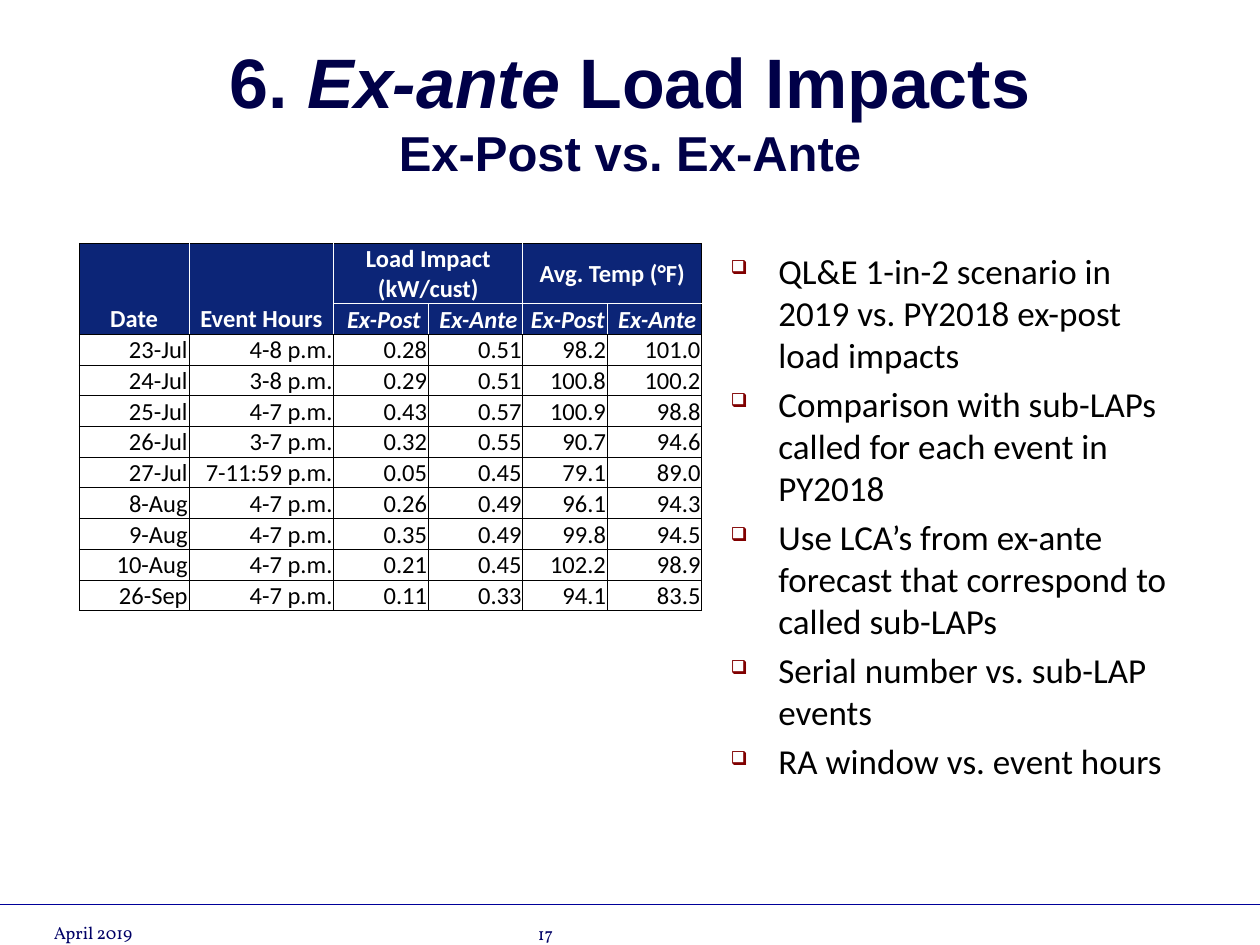
from dataclasses import dataclass, field

from lxml.etree import SubElement
from pptx import Presentation
from pptx.dml.color import RGBColor
from pptx.enum.shapes import MSO_CONNECTOR
from pptx.enum.text import MSO_ANCHOR, PP_ALIGN
from pptx.oxml.ns import qn
from pptx.util import Inches, Pt

COLUMNS, ROWS = 100, 75
SLIDE_WIDTH, SLIDE_HEIGHT = Inches(10), Inches(7.5)
WHITE, BLACK, NAVY = "FFFFFF", "000000", "0C2577"
MAROON, FOOTER_BLUE, RULE_BLUE = "800000", "000066", "000099"

TITLE_FORMAT = {"name": "Arial", "size": Pt(40), "bold": True, "color": "000048"}
BODY_FORMAT = {"name": "Calibri", "size": Pt(20), "color": BLACK}
FOOTER_FORMAT = {"name": "Vollkorn", "size": Pt(10), "color": FOOTER_BLUE}
CELL_FORMAT = {"name": "Calibri", "size": Pt(14), "color": BLACK}
HEADER_FORMAT = CELL_FORMAT | {"bold": True, "color": WHITE}
CELL_MARGINS = {"margin_left": Inches(0.01), "margin_right": Inches(0.01),
                "margin_top": Inches(0.01), "margin_bottom": 0}

TABLE_COLUMNS = (8.7, 11.5, 7.5, 7.5, 6.7, 7.5)
TABLE_ROWS = (4.8,) + (2.4,) * 10
HEADER_ROWS, FIRST_GROUPED_COLUMN = 2, 2
HEADER_SPANS = (((0, 0), (1, 0)), ((0, 1), (1, 1)), ((0, 2), (0, 3)), ((0, 4), (0, 5)))
TABLE_VALUES = (
    ("Date", "Event Hours", "Load Impact (kW/cust)", "", "Avg. Temp (°F)", ""),
    ("", "", " Ex-Post", " Ex-Ante", " Ex-Post", " Ex-Ante"),
    ("23-Jul", "4-8 p.m.", "0.28", "0.51", "98.2", "101.0"),
    ("24-Jul", "3-8 p.m.", "0.29", "0.51", "100.8", "100.2"),
    ("25-Jul", "4-7 p.m.", "0.43", "0.57", "100.9", "98.8"),
    ("26-Jul", "3-7 p.m.", "0.32", "0.55", "90.7", "94.6"),
    ("27-Jul", "7-11:59 p.m.", "0.05", "0.45", "79.1", "89.0"),
    ("8-Aug", "4-7 p.m.", "0.26", "0.49", "96.1", "94.3"),
    ("9-Aug", "4-7 p.m.", "0.35", "0.49", "99.8", "94.5"),
    ("10-Aug", "4-7 p.m.", "0.21", "0.45", "102.2", "98.9"),
    ("26-Sep", "4-7 p.m.", "0.11", "0.33", "94.1", "83.5"),
)


@dataclass(frozen=True)
class Run:
    """A stretch of text with its own changes to the format of its block."""
    text: str
    changes: dict = field(default_factory=dict)


@dataclass(frozen=True)
class TextBlock:
    """A text box placed in grid columns and rows."""
    column: float
    row: float
    width: float
    height: float
    paragraphs: tuple
    text_format: dict
    anchor: MSO_ANCHOR = MSO_ANCHOR.TOP
    alignment: PP_ALIGN = PP_ALIGN.LEFT
    bulleted: bool = False


TEXT_BLOCKS = (
    TextBlock(5, 2.5, 90, 12.5,
              ((Run("6. "), Run("Ex-ante", {"italic": True}), Run(" Load Impacts"),
                Run("\v"), Run("Ex-Post vs. Ex-Ante", {"size": Pt(28)})),),
              TITLE_FORMAT, MSO_ANCHOR.MIDDLE, PP_ALIGN.CENTER),
    TextBlock(57, 19.3, 36.7, 49.3,
              ((Run("QL&E 1-in-2 scenario in 2019 vs. PY2018 ex-post load impacts"),),
               (Run("Comparison with sub-LAPs called for each event in PY2018"),),
               (Run("Use LCA’s from ex-ante forecast that correspond to called sub-LAPs"),),
               (Run("Serial number vs. sub-LAP events"),),
               (Run("RA window vs. event hours"),)),
              BODY_FORMAT, bulleted=True),
    TextBlock(3.3, 70.1, 23.3, 5.2, ((Run("April 2019"),),),
              FOOTER_FORMAT, MSO_ANCHOR.BOTTOM),
    TextBlock(41.7, 70.2, 23.3, 5.2, ((Run("17"),),),
              FOOTER_FORMAT, MSO_ANCHOR.BOTTOM),
)


def across(columns: float) -> int:
    """Turn grid columns into a length."""
    return round(SLIDE_WIDTH * columns / COLUMNS)


def down(rows: float) -> int:
    """Turn grid rows into a length."""
    return round(SLIDE_HEIGHT * rows / ROWS)


def paint(color_format, value: str) -> None:
    """Set a colour from a hex string."""
    color_format.rgb = RGBColor.from_string(value)


def apply(target, values: dict) -> None:
    """Set each attribute named in a dict of format values."""
    for name, value in values.items():
        if name == "color":
            paint(target.color, value)
        else:
            setattr(target, name, value)


def add_bullet(paragraph) -> None:
    """Give a paragraph a hanging box bullet."""
    properties = paragraph._p.get_or_add_pPr()
    properties.set("marL", str(Inches(0.38)))
    properties.set("indent", str(-Inches(0.38)))
    color = SubElement(properties, qn("a:buClr"))
    SubElement(color, qn("a:srgbClr"), val=MAROON)
    SubElement(properties, qn("a:buSzPct"), val="55000")
    SubElement(properties, qn("a:buChar"), char="❑")


def draw_text(slide, block: TextBlock) -> None:
    """Draw a text block."""
    shape = slide.shapes.add_textbox(across(block.column), down(block.row),
                                     across(block.width), down(block.height))
    frame = shape.text_frame
    apply(frame, {"word_wrap": True, "vertical_anchor": block.anchor})
    for index, runs in enumerate(block.paragraphs):
        paragraph = frame.add_paragraph() if index else frame.paragraphs[0]
        paragraph.alignment = block.alignment
        if block.bulleted:
            add_bullet(paragraph)
            paragraph.space_before = Pt(4 if index else 0)
        for part in runs:
            if part.text == "\v":
                paragraph.add_line_break()
                continue
            run = paragraph.add_run()
            run.text = part.text
            apply(run.font, block.text_format | part.changes)


def draw_borders(cell, row: int, column: int) -> None:
    """Rule a cell in black, with white lines inside the header."""
    header = row < HEADER_ROWS
    grouped = header and column >= FIRST_GROUPED_COLUMN
    inner = {
        "L": header and column > 0,
        "R": header and column + cell.span_width < len(TABLE_COLUMNS),
        "T": grouped and row == 1,
        "B": grouped and row == 0,
    }
    properties = cell._tc.get_or_add_tcPr()
    for side, is_white in inner.items():
        line = SubElement(properties, qn(f"a:ln{side}"), w=str(Pt(0.5)))
        fill = SubElement(line, qn("a:solidFill"))
        SubElement(fill, qn("a:srgbClr"), val=WHITE if is_white else BLACK)


def draw_cell(cell, row: int, column: int, text: str) -> None:
    """Draw one table cell."""
    header = row < HEADER_ROWS
    draw_borders(cell, row, column)
    if header:
        cell.fill.solid()
        paint(cell.fill.fore_color, NAVY)
    else:
        cell.fill.background()
    in_group_title = row == 0 and column >= FIRST_GROUPED_COLUMN
    anchor = MSO_ANCHOR.MIDDLE if in_group_title else MSO_ANCHOR.BOTTOM
    apply(cell, CELL_MARGINS | {"vertical_anchor": anchor})
    if cell.is_spanned:
        return
    paragraph = cell.text_frame.paragraphs[0]
    paragraph.alignment = PP_ALIGN.CENTER if header else PP_ALIGN.RIGHT
    run = paragraph.add_run()
    run.text = text
    apply(run.font, (HEADER_FORMAT if header else CELL_FORMAT) | {"italic": row == 1})


def draw_table(slide) -> None:
    """Draw the table of events."""
    frame = slide.shapes.add_table(len(TABLE_ROWS), len(TABLE_COLUMNS), across(6.3), down(19.3),
                                   across(sum(TABLE_COLUMNS)), down(sum(TABLE_ROWS)))
    table = frame.table
    apply(table, {"first_row": False, "horz_banding": False})
    for column, width in zip(table.columns, TABLE_COLUMNS):
        column.width = across(width)
    for row, height in zip(table.rows, TABLE_ROWS):
        row.height = down(height)
    for first, last in HEADER_SPANS:
        table.cell(*first).merge(table.cell(*last))
    for row, values in enumerate(TABLE_VALUES):
        for column, text in enumerate(values):
            draw_cell(table.cell(row, column), row, column, text)


def draw_footer_rule(slide) -> None:
    """Draw the line above the footer."""
    rule = slide.shapes.add_connector(MSO_CONNECTOR.STRAIGHT, 0, down(71.8),
                                      across(COLUMNS), down(71.8))
    rule.line.width = Pt(0.75)
    paint(rule.line.color, RULE_BLUE)
    SubElement(rule._element.spPr, qn("a:effectLst"))


def main() -> None:
    """Build and save the slide."""
    presentation = Presentation()
    apply(presentation, {"slide_width": SLIDE_WIDTH, "slide_height": SLIDE_HEIGHT})
    slide = presentation.slides.add_slide(presentation.slide_layouts[6])
    draw_footer_rule(slide)
    for block in TEXT_BLOCKS:
        draw_text(slide, block)
    draw_table(slide)
    presentation.save("out.pptx")


if __name__ == "__main__":
    main()
